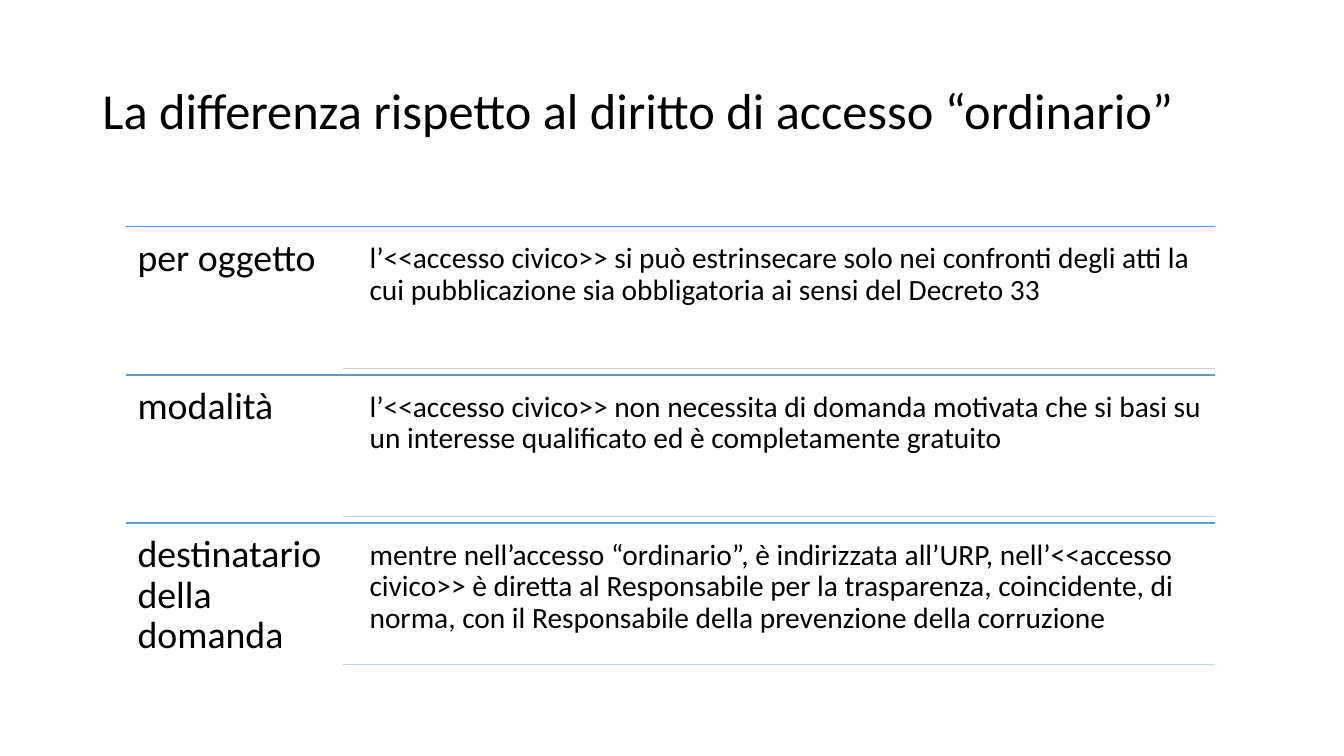
"""Builds a slide on how civic access differs from ordinary access."""
from dataclasses import dataclass

from lxml import etree
from pptx import Presentation, util as u
from pptx.dml.color import RGBColor
from pptx.enum import shapes, text
from pptx.oxml.ns import qn

EMU_PER_PX = 9525
LEFT, DETAIL_LEFT, RIGHT = 120, 327, 1157
TOP, ROW_HEIGHT = 216, 141

DIFFERENCES = [
    ("per oggetto",
     "l’<<accesso civico>> si può estrinsecare solo nei confronti degli atti la "
     "cui pubblicazione sia obbligatoria ai sensi del Decreto 33"),
    ("modalità",
     "l’<<accesso civico>> non necessita di domanda motivata che si basi su "
     "un interesse qualificato ed è completamente gratuito"),
    ("destinatario della domanda",
     "mentre nell’accesso “ordinario”, è indirizzata all’URP, nell’<<accesso "
     "civico>> è diretta al Responsabile per la trasparenza, coincidente, di "
     "norma, con il Responsabile della prevenzione della corruzione"),
]


@dataclass(frozen=True)
class Theme:
    """Colours, font and type sizes of the slide."""
    ink: RGBColor = RGBColor(0x00, 0x00, 0x00)
    row_rule: RGBColor = RGBColor(0x5B, 0x9B, 0xD5)
    detail_rule: RGBColor = RGBColor(0xC4, 0xD5, 0xEB)
    font: str = "Calibri"
    title: int = 36
    aspect: int = 27
    detail: int = 21


THEME = Theme()


def px(length):
    """Turn pixels into EMU."""
    return u.Emu(length * EMU_PER_PX)


def write(frame, wording, size, anchor):
    """Fill a text frame with one left-aligned paragraph."""
    frame.text = wording
    frame.word_wrap = True
    frame.auto_size = text.MSO_AUTO_SIZE.NONE
    frame.vertical_anchor = anchor
    paragraph = frame.paragraphs[0]
    paragraph.alignment = text.PP_ALIGN.LEFT
    paragraph.line_spacing = 0.9
    font = paragraph.runs[0].font
    font.name, font.size = THEME.font, u.Pt(size)
    font.color.rgb = THEME.ink


def add_title(slide, wording):
    """Place and format the title placeholder."""
    title = slide.shapes.title
    title.left, title.top, title.width, title.height = map(px, (88, 38, 1104, 139))
    write(title.text_frame, wording, THEME.title, text.MSO_ANCHOR.MIDDLE)


def add_words(parent, box, wording, size, inset):
    """Add a top-anchored text box with equal insets."""
    frame = parent.add_textbox(*map(px, box)).text_frame
    frame.margin_left = frame.margin_right = px(inset)
    frame.margin_top = frame.margin_bottom = px(inset)
    write(frame, wording, size, text.MSO_ANCHOR.TOP)


def add_rule(parent, left, y, color):
    """Draw a thin horizontal line to the right edge of the list."""
    rule = parent.add_connector(
        shapes.MSO_CONNECTOR.STRAIGHT, px(left), px(y), px(RIGHT), px(y))
    rule.line.color.rgb = color
    rule.line.width = u.Pt(1)
    etree.SubElement(rule._element.spPr, qn("a:effectLst"))


def add_difference(parent, top, aspect, detail):
    """Add one row: its rule, aspect, detail and closing rule."""
    add_rule(parent, LEFT, top, THEME.row_rule)
    add_words(parent, (LEFT, top, DETAIL_LEFT - LEFT, ROW_HEIGHT),
              aspect, THEME.aspect, 11)
    add_words(parent, (343, top + 7, RIGHT - 343, 129), detail, THEME.detail, 9)
    add_rule(parent, DETAIL_LEFT, top + 135, THEME.detail_rule)


def main():
    """Build and save the slide."""
    deck = Presentation()
    deck.slide_width, deck.slide_height = px(1280), px(720)
    slide = deck.slides.add_slide(deck.slide_layouts[5])
    add_title(slide, "La differenza rispetto al diritto di accesso “ordinario”")
    differences = slide.shapes.add_group_shape().shapes
    for row, (aspect, detail) in enumerate(DIFFERENCES):
        add_difference(differences, TOP + row * ROW_HEIGHT, aspect, detail)
    deck.save("out.pptx")


if __name__ == "__main__":
    main()
